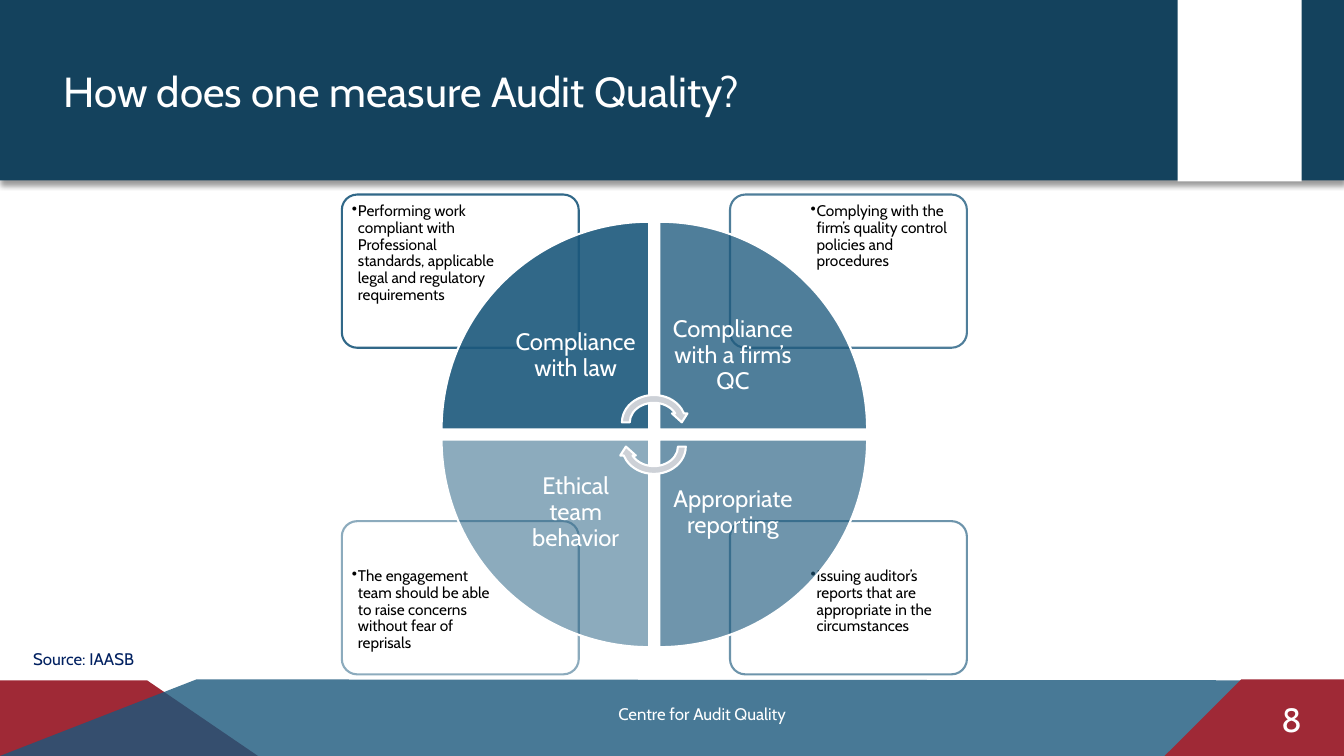
from dataclasses import dataclass
from lxml import etree
from pptx import Presentation
from pptx.dml.color import RGBColor
from pptx.enum.shapes import MSO_SHAPE
from pptx.enum.text import MSO_ANCHOR, PP_ALIGN
from pptx.oxml.ns import qn
from pptx.util import Pt

RECT, ROUNDED = MSO_SHAPE.RECTANGLE, MSO_SHAPE.ROUNDED_RECTANGLE
WEDGE, ARROW = MSO_SHAPE.PIE_WEDGE, MSO_SHAPE.CIRCULAR_ARROW
TOP, MIDDLE = MSO_ANCHOR.TOP, MSO_ANCHOR.MIDDLE
LEFT, CENTER = PP_ALIGN.LEFT, PP_ALIGN.CENTER
EMU_PER_PX = 9144


@dataclass(frozen=True)
class Theme:
    font: str = "Cabin"
    white: str = "FFFFFF"
    black: str = "000000"
    navy: str = "14425D"
    blue: str = "1B587C"
    red: str = "9F2936"
    grey: str = "CDD1D7"
    source: str = "002060"
    title: int = 30
    number: int = 24
    label: int = 17
    small: int = 12
    detail: int = 11
    outline: float = 1.5


THEME = Theme()

QUADRANTS = [
    (0, 0, 0, 90, "Compliance with law",
     "Performing work compliant with Professional standards, applicable "
     "legal and regulatory requirements"),
    (0, 1, 90, 77, "Compliance with a firm’s QC",
     "Complying with the firm’s quality control policies and procedures"),
    (1, 1, 180, 63, "Appropriate reporting",
     "Issuing auditor’s reports that are appropriate in the circumstances"),
    (1, 0, 270, 50, "Ethical team behavior",
     "The engagement team should be able to raise concerns without fear of reprisals"),
]


def px(*lengths):
    return [round(length * EMU_PER_PX) for length in lengths]


def set_alpha(solid_fill, percent):
    etree.SubElement(solid_fill[0], qn("a:alpha"), val=str(percent * 1000))


def paint(shape, color, alpha=100, line=None, line_alpha=100):
    shape.shadow.inherit = False
    shape.fill.solid()
    shape.fill.fore_color.rgb = RGBColor.from_string(color)
    properties = shape._element.spPr
    if alpha < 100:
        set_alpha(properties.find(qn("a:solidFill")), alpha)
    if line is None:
        shape.line.fill.background()
        return
    shape.line.color.rgb = RGBColor.from_string(line)
    shape.line.width = Pt(THEME.outline)
    if line_alpha < 100:
        set_alpha(properties.find(qn("a:ln")).find(qn("a:solidFill")), line_alpha)


def add_block(slide, kind, box, color, **style):
    block = slide.shapes.add_shape(kind, *px(*box))
    paint(block, color, **style)
    return block


def write(holder, words, size, color, align=LEFT, anchor=TOP, inset=None, spacing=None):
    frame = holder.text_frame
    frame.word_wrap = True
    frame.vertical_anchor = anchor
    if inset is not None:
        frame.margin_left = frame.margin_top = px(inset)[0]
        frame.margin_right = frame.margin_bottom = px(inset)[0]
    frame.text = words
    paragraph = frame.paragraphs[0]
    paragraph.alignment = align
    paragraph.line_spacing = spacing
    paragraph.font.name = THEME.font
    paragraph.font.size = Pt(size)
    paragraph.font.color.rgb = RGBColor.from_string(color)
    return paragraph


def add_words(slide, box, *args, **style):
    return write(slide.shapes.add_textbox(*px(*box)), *args, **style)


def add_bullet(paragraph, indent):
    properties = paragraph._p.get_or_add_pPr()
    properties.set("marL", str(px(indent)[0]))
    properties.set("indent", str(px(-indent)[0]))
    bullet = etree.Element(qn("a:buChar"), char="•")
    properties.find(qn("a:defRPr")).addprevious(bullet)


def add_header_shadow(banner):
    effects = banner._element.spPr.find(qn("a:effectLst"))
    shadow = etree.SubElement(
        effects, qn("a:outerShdw"), blurRad=str(Pt(4)), dist=str(Pt(3)),
        dir="5400000", algn="t", rotWithShape="0")
    color = etree.SubElement(shadow, qn("a:srgbClr"), val=THEME.black)
    etree.SubElement(color, qn("a:alpha"), val="40000")


def add_header(slide, box):
    x, y, w, h = box
    add_header_shadow(add_block(slide, RECT, box, THEME.navy))
    add_block(slide, RECT, (x + 1168, y, 123, h + 1), THEME.white)
    title = slide.shapes.title
    title.left, title.top, title.width, title.height = px(x + 53, y + 60, 1115, 61)
    write(title, "How does one measure Audit Quality?", THEME.title, THEME.white)
    title._element.getparent().append(title._element)


def add_footer(slide, box):
    x, y, w, h = box
    bands = [
        ([(0, h), (0, 1), (146, 1), (256, h)], THEME.red, 100),
        ([(0, h), (195, 0), (w, 1), (w, h)], THEME.blue, 80),
        ([(w, h), (w, 0), (w - 102, 0), (w - 178, h)], THEME.red, 100),
    ]
    for corners, color, alpha in bands:
        points = [tuple(px(x + dx, y + dy)) for dx, dy in corners]
        outline = slide.shapes.build_freeform(*points[0])
        outline.add_line_segments(points[1:], close=True)
        paint(outline.convert_to_shape(), color, alpha)
    add_words(slide, (x + w - 104, y + 14, 104, 50), "8",
              THEME.number, THEME.white, align=CENTER)
    add_words(slide, (x + 226, y + 19, 941, 30), "Centre for Audit Quality",
              THEME.small, THEME.white, align=CENTER)


def add_callout(slide, box, row, col, strength, detail):
    x, y, w, h = box
    card = add_block(slide, ROUNDED, box, THEME.white, alpha=90,
                     line=THEME.blue, line_alpha=strength)
    card.adjustments[0] = 0.1
    text_box = (x + (74 if col else 4), y + (41 if row else 3), 158, 108)
    add_bullet(add_words(slide, text_box, detail, THEME.detail, THEME.black,
                         inset=6, spacing=0.9), 6)


def add_wedge(slide, box, row, col, turn, strength, label):
    x, y, w, h = box
    wedge = add_block(slide, WEDGE, box, THEME.blue, alpha=strength, line=THEME.white)
    wedge.rotation = turn
    side = 146
    label_box = (x + (1 - col) * (w - side), y + (1 - row) * (h - side), side, side)
    add_words(slide, label_box, label, THEME.label, THEME.white,
              align=CENTER, anchor=MIDDLE, inset=13, spacing=0.9)


def add_cycle(slide, box):
    x, y, w, h = box
    center_x, center_y = x + w // 2, y + h // 2
    card_w, card_h, radius, half_gap = 235, 152, 206, 5
    for row, col, turn, strength, label, detail in QUADRANTS:
        card = (x + col * (w - card_w), y + row * (h - card_h), card_w, card_h)
        add_callout(slide, card, row, col, strength, detail)
    for row, col, turn, strength, label, detail in QUADRANTS:
        left = center_x + (half_gap if col else -half_gap - radius)
        top = center_y + (half_gap if row else -half_gap - radius)
        add_wedge(slide, (left, top, radius, radius), row, col, turn, strength, label)
    for rise, turn in ((43, 0), (19, 180)):
        arrow = add_block(slide, ARROW, (center_x - 36, center_y - rise, 71, 62),
                          THEME.grey, line=THEME.white)
        arrow.rotation = turn


def add_source(slide, box):
    add_words(slide, box, "Source: IAASB", THEME.small, THEME.source)


def main():
    deck = Presentation()
    deck.slide_width, deck.slide_height = px(1333, 750)
    slide = deck.slides.add_slide(deck.slide_layouts[5])
    add_footer(slide, (0, 674, 1333, 76))
    add_header(slide, (0, 0, 1333, 179))
    add_cycle(slide, (339, 193, 620, 476))
    add_source(slide, (23, 639, 694, 30))
    deck.save("out.pptx")


if __name__ == "__main__":
    main()
